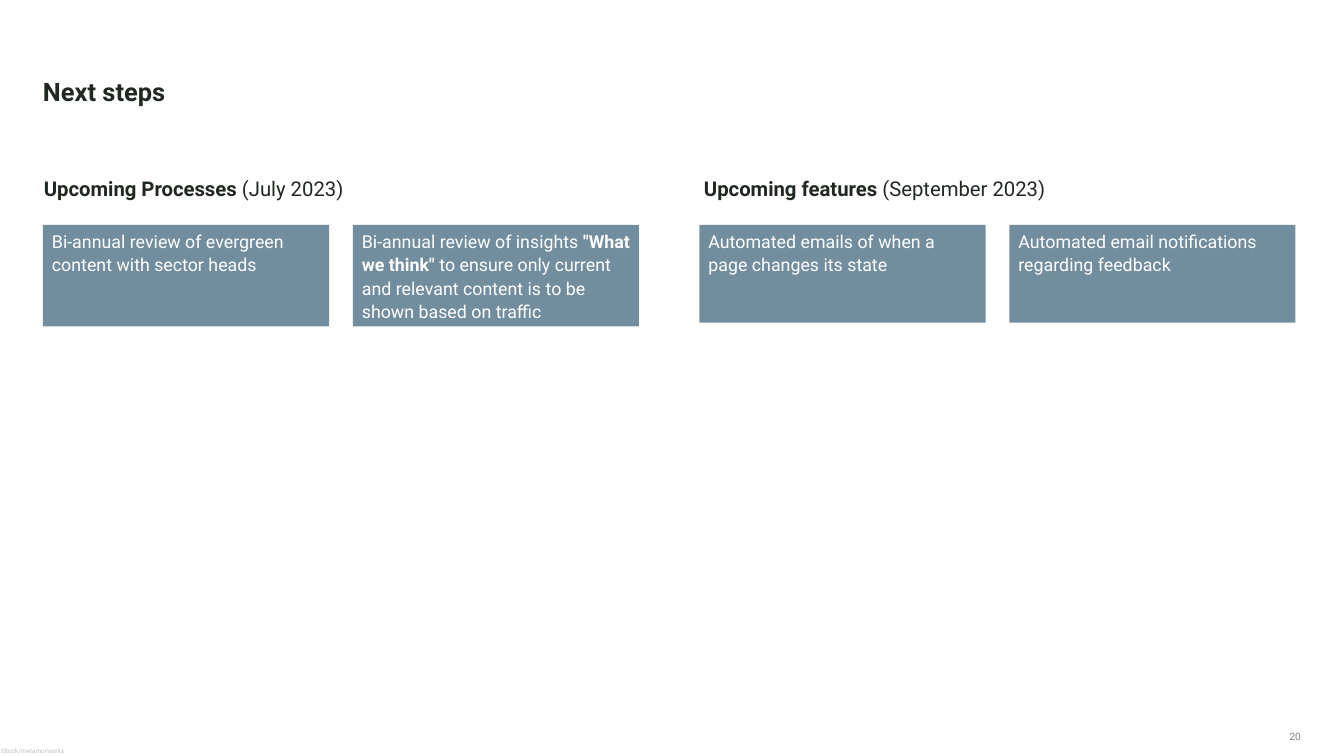
from dataclasses import dataclass

from pptx import Presentation
from pptx.dml.color import RGBColor
from pptx.enum.shapes import MSO_SHAPE
from pptx.enum.text import MSO_ANCHOR, MSO_AUTO_SIZE, PP_ALIGN
from pptx.util import Inches, Pt


@dataclass(frozen=True)
class Theme:
    font: str = "Roboto"
    ink: str = "212721"
    card: str = "728E9E"
    on_card: str = "FFFFFF"
    page_number: str = "808080"
    credit: str = "C0C0C0"
    title_size: int = 20
    heading_size: int = 16
    card_size: int = 14
    number_size: int = 8
    credit_size: int = 5


THEME = Theme()
CARD_WIDTH, CARD_GAP = 3.13, 0.26

# Each card is a list of (text, bold) spans
PROCESSES = [
    [("Bi-annual review of evergreen content with sector heads", False)],
    [
        ("Bi-annual review of insights ", False),
        ('"What we think" ', True),
        ("to ensure only current and relevant content is to be shown based on traffic", False),
    ],
]
FEATURES = [
    [("Automated emails of when a page changes its state", False)],
    [("Automated email notifications regarding feedback", False)],
]


def place(shape, left, top, width, height):
    shape.left, shape.top = Inches(left), Inches(top)
    shape.width, shape.height = Inches(width), Inches(height)


def write(shape, spans, size, color, anchor=MSO_ANCHOR.TOP, align=PP_ALIGN.LEFT,
          line_spacing=1.0, insets=(0, 0, 0, 0), wrap=True):
    frame = shape.text_frame
    frame.auto_size = MSO_AUTO_SIZE.NONE
    frame.word_wrap = wrap
    frame.vertical_anchor = anchor
    (frame.margin_left, frame.margin_top,
     frame.margin_right, frame.margin_bottom) = map(Inches, insets)
    para = frame.paragraphs[0]
    para.alignment = align
    para.line_spacing = line_spacing
    para.space_before = Pt(0)
    for text, bold in spans:
        span = para.add_run()
        span.text = text
        span.font.name = THEME.font
        span.font.size = Pt(size)
        span.font.bold = bold
        span.font.color.rgb = RGBColor.from_string(color)


def add_text(page, left, top, width, height, spans, size, color, **options):
    box = page.shapes.add_textbox(*map(Inches, (left, top, width, height)))
    write(box, spans, size, color, **options)


def add_title(page, left, top, width, height):
    title = page.shapes.title
    place(title, left, top, width, height)
    write(title, [("Next steps", True)], THEME.title_size, THEME.ink,
          anchor=MSO_ANCHOR.BOTTOM, line_spacing=1.07)


def add_card(page, left, top, height, spans):
    card = page.shapes.add_shape(
        MSO_SHAPE.RECTANGLE, *map(Inches, (left, top, CARD_WIDTH, height)))
    card.shadow.inherit = False
    card.fill.solid()
    card.fill.fore_color.rgb = RGBColor.from_string(THEME.card)
    card.line.fill.background()
    write(card, spans, THEME.card_size, THEME.on_card,
          line_spacing=1.1, insets=(0.1, 0.04, 0.1, 0.1))


def add_section(page, left, top, card_height, heading, date, cards, heading_indent):
    """Heading with a row of cards below it."""
    add_text(page, left + heading_indent, top, 6.52, 0.5,
             [(heading, True), (date, False)], THEME.heading_size, THEME.ink,
             anchor=MSO_ANCHOR.BOTTOM)
    for column, spans in enumerate(cards):
        add_card(page, left + column * (CARD_WIDTH + CARD_GAP), top + 0.77,
                 card_height, spans)


def add_footer(page):
    add_text(page, 11.51, 7.99, 2.72, 0.12, [("20", False)],
             THEME.number_size, THEME.page_number, align=PP_ALIGN.RIGHT)
    add_text(page, 0.01, 8.17, 0.71, 0.09, [("iStock/metamorworks", False)],
             THEME.credit_size, THEME.credit, anchor=MSO_ANCHOR.BOTTOM,
             line_spacing=1.1, wrap=False)


def main():
    deck = Presentation()
    deck.slide_width, deck.slide_height = Inches(14.7), Inches(8.27)
    page = deck.slides.add_slide(deck.slide_layouts[5])

    add_title(page, 0.47, 0.82, 11.81, 0.35)
    # Two sections side by side
    add_section(page, 0.47, 1.69, 1.11, "Upcoming Processes ", "(July 2023)",
                PROCESSES, heading_indent=0.01)
    add_section(page, 7.65, 1.69, 1.07, "Upcoming features ", "(September 2023)",
                FEATURES, heading_indent=0.05)
    add_footer(page)

    deck.save("out.pptx")


if __name__ == "__main__":
    main()
